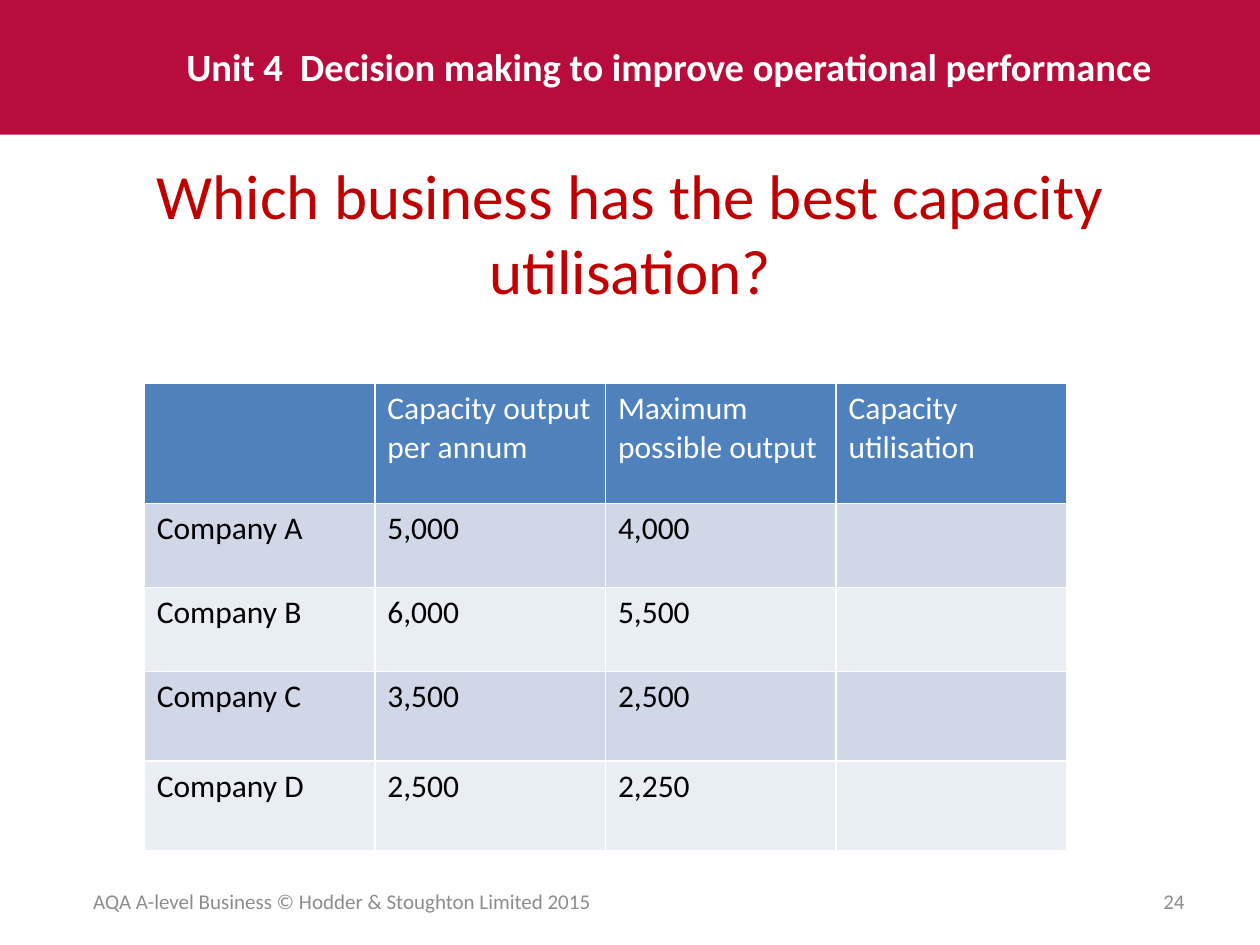
from dataclasses import dataclass

from pptx import Presentation
from pptx.dml.color import RGBColor
from pptx.enum.shapes import MSO_SHAPE
from pptx.enum.text import MSO_ANCHOR, PP_ALIGN
from pptx.slide import Slide
from pptx.text.text import _Paragraph
from pptx.util import Pt

RECTANGLE = MSO_SHAPE.RECTANGLE
TOP, MIDDLE = MSO_ANCHOR.TOP, MSO_ANCHOR.MIDDLE
LEFT, CENTER, RIGHT = PP_ALIGN.LEFT, PP_ALIGN.CENTER, PP_ALIGN.RIGHT

WHITE = RGBColor(0xFF, 0xFF, 0xFF)
BLACK = RGBColor(0x00, 0x00, 0x00)
CRIMSON = RGBColor(0xB7, 0x0C, 0x3C)
RED = RGBColor(0xC0, 0x00, 0x00)
GREY = RGBColor(0x8C, 0x8C, 0x8C)
HEADER_BLUE = RGBColor(0x4F, 0x81, 0xBD)
BAND_FILLS = (RGBColor(0xD0, 0xD8, 0xE8), RGBColor(0xE9, 0xED, 0xF4))

FONT = "Calibri"
SLIDE_WIDTH, SLIDE_HEIGHT = 720, 540
BANNER_HEIGHT = 77
TABLE_LEFT, TABLE_TOP = 82.4, 219.2
COLUMN_WIDTH = 131.8
ROW_HEIGHTS = (68.4, 48, 48, 51.4, 51.4)
TABLE_ROWS = (
    ("", "Capacity output per annum", "Maximum possible output", "Capacity utilisation"),
    ("Company A", "5,000", "4,000", ""),
    ("Company B", "6,000", "5,500", ""),
    ("Company C", "3,500", "2,500", ""),
    ("Company D", "2,500", "2,250", ""),
)


@dataclass(frozen=True)
class Label:
    text: str
    left: float
    top: float
    width: float
    height: float
    size: float
    color: RGBColor
    align: PP_ALIGN = LEFT
    anchor: MSO_ANCHOR = MIDDLE
    bold: bool = False


LABELS = (
    Label("Unit 4  Decision making to improve operational performance",
          99.4, 20.9, 578.2, 33.8, 22, WHITE, anchor=TOP, bold=True),
    Label("Which business has the best capacity utilisation?",
          36.7, 94.3, 646.6, 76.3, 36, RED, CENTER),
    Label("AQA A-level Business © Hodder & Stoughton Limited 2015",
          36.7, 500.4, 317.5, 28.8, 12, GREY, CENTER),
    Label("24", 516.2, 500.4, 167.8, 28.8, 12, GREY, RIGHT),
)


def style_paragraph(paragraph: _Paragraph, size: float, color: RGBColor, bold: bool = False) -> None:
    font = paragraph.font
    font.name = FONT
    font.size = Pt(size)
    font.bold = bold
    font.color.rgb = color


def add_banner(page: Slide) -> None:
    banner = page.shapes.add_shape(RECTANGLE, 0, 0, Pt(SLIDE_WIDTH), Pt(BANNER_HEIGHT))
    banner.shadow.inherit = False
    banner.fill.solid()
    banner.fill.fore_color.rgb = CRIMSON
    banner.line.fill.background()


def add_label(page: Slide, label: Label) -> None:
    box = page.shapes.add_textbox(Pt(label.left), Pt(label.top), Pt(label.width), Pt(label.height))
    frame = box.text_frame
    frame.word_wrap = True
    frame.vertical_anchor = label.anchor
    paragraph = frame.paragraphs[0]
    paragraph.text = label.text
    paragraph.alignment = label.align
    style_paragraph(paragraph, label.size, label.color, label.bold)


def add_capacity_table(page: Slide) -> None:
    column_count = len(TABLE_ROWS[0])
    table = page.shapes.add_table(
        len(TABLE_ROWS), column_count, Pt(TABLE_LEFT), Pt(TABLE_TOP),
        Pt(COLUMN_WIDTH * column_count), Pt(sum(ROW_HEIGHTS)),
    ).table
    for column in table.columns:
        column.width = Pt(COLUMN_WIDTH)
    for index, (height, texts) in enumerate(zip(ROW_HEIGHTS, TABLE_ROWS)):
        row = table.rows[index]
        row.height = Pt(height)
        is_header = index == 0
        fill = HEADER_BLUE if is_header else BAND_FILLS[(index - 1) % 2]
        for cell, text in zip(row.cells, texts):
            cell.fill.solid()
            cell.fill.fore_color.rgb = fill
            paragraph = cell.text_frame.paragraphs[0]
            paragraph.text = text
            style_paragraph(paragraph, 18, WHITE if is_header else BLACK)


def main() -> None:
    """Build the capacity utilisation slide."""
    deck = Presentation()
    deck.slide_width, deck.slide_height = Pt(SLIDE_WIDTH), Pt(SLIDE_HEIGHT)
    page = deck.slides.add_slide(deck.slide_layouts[6])
    add_banner(page)
    for label in LABELS:
        add_label(page, label)
    add_capacity_table(page)
    deck.save("out.pptx")


if __name__ == "__main__":
    main()
